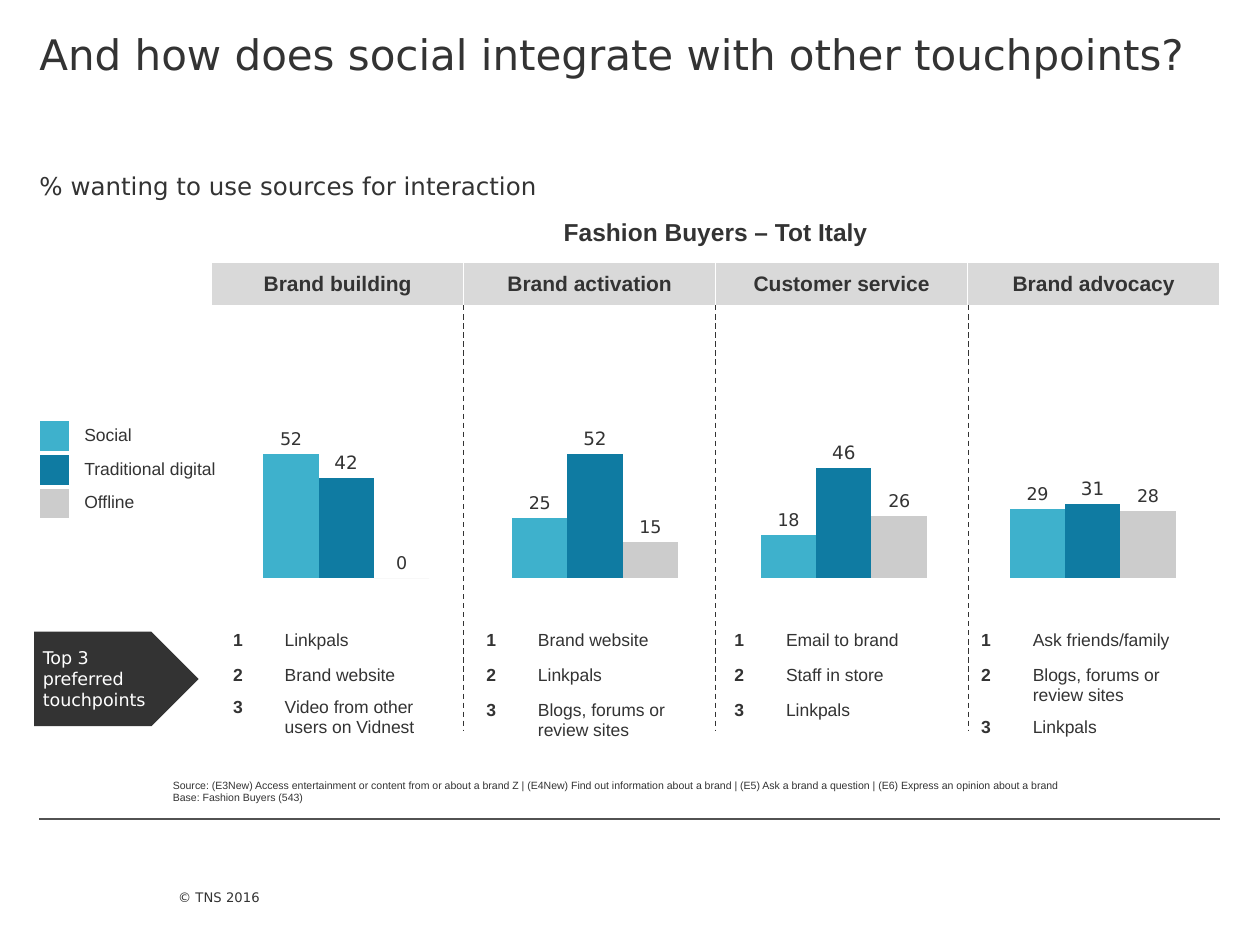
import pptx
import pptx.util
import pptx.chart.data
import pptx.dml.color
import pptx.enum.chart
import pptx.enum.dml
import pptx.enum.shapes
import pptx.enum.text
import pptx.oxml
import pptx.oxml.ns
import lxml.etree

Pt = pptx.util.Pt
RGB = pptx.dml.color.RGBColor.from_string
qn = pptx.oxml.ns.qn
ANCHOR = pptx.enum.text.MSO_ANCHOR
CENTER = pptx.enum.text.PP_ALIGN.CENTER
LEFT = pptx.enum.text.PP_ALIGN.LEFT

theme = {
    "ink": "333333", "rule": "525252", "white": "FFFFFF", "header": "D9D9D9",
    "social": "3EB1CC", "digital": "0F7BA2", "offline": "CCCCCC",
    "sans": "Arial", "display": "DejaVu Sans", "plain_table": "{2D5ABB26-0587-4C30-8999-92F81FD0307C}",
    "title": 24, "subtitle": 14, "heading": 12, "body": 10, "label": 10.5, "footer": 7.5, "source": 6,
}


def write(holder, text, size, face="sans", color="ink", bold=False, align=LEFT, **layout):
    for name, value in layout.items():
        setattr(holder, name, value)
    frame = getattr(holder, "text_frame", holder)
    frame.text = text
    paragraph = frame.paragraphs[0]
    paragraph.alignment = align
    if not text:
        lxml.etree.SubElement(paragraph._p, qn("a:endParaRPr")).set("sz", str(theme[size] * 100))
    for run in paragraph.runs:
        values = {"name": theme[face], "size": Pt(theme[size]), "bold": bold}
        for name, value in values.items():
            setattr(run.font, name, value)
        run.font.color.rgb = RGB(theme[color])


def add_grid(left, top, widths, heights, fills=None, border=0, sides="LRTB"):
    table = slide.shapes.add_table(len(heights), len(widths), Pt(left), Pt(top),
                                   Pt(sum(widths)), Pt(sum(heights))).table
    table.first_row = table.horz_banding = False
    table._tbl.tblPr.find(qn("a:tableStyleId")).text = theme["plain_table"]
    for column, width in zip(table.columns, widths):
        column.width = Pt(width)
    for row, height in zip(table.rows, heights):
        row.height = Pt(height)
    for index, cell in enumerate(table.iter_cells()):
        for side in sides if border else "":
            line = lxml.etree.SubElement(cell._tc.get_or_add_tcPr(), qn(f"a:ln{side}"), w=str(Pt(border)))
            solid = lxml.etree.SubElement(line, qn("a:solidFill"))
            lxml.etree.SubElement(solid, qn("a:srgbClr"), val=theme["white"])
        if fills and fills[index]:
            cell.fill.solid()
            cell.fill.fore_color.rgb = RGB(theme[fills[index]])
        else:
            cell.fill.background()
    return table


deck = pptx.Presentation()
deck.slide_width, deck.slide_height = Pt(720), Pt(540)
slide = deck.slides.add_slide(deck.slide_layouts[5])

title = slide.shapes.title
title.left, title.top, title.width, title.height = Pt(22.5), Pt(0), Pt(674.5), Pt(81.5)
subtitle = slide.shapes.add_textbox(Pt(22.5), Pt(81.5), Pt(674.5), Pt(43))
copyright_line = slide.shapes.add_textbox(Pt(101.75), Pt(498), Pt(200), Pt(42))
no_inset = {f"margin_{side}": 0 for side in ("left", "top", "right", "bottom")}
frame_layout = no_inset | {"word_wrap": True, "auto_size": pptx.enum.text.MSO_AUTO_SIZE.NONE,
                           "vertical_anchor": ANCHOR.TOP}
heading_layout = frame_layout | {"margin_top": Pt(16.5)}
footer_layout = frame_layout | {"margin_bottom": Pt(22.5), "vertical_anchor": ANCHOR.BOTTOM}
for box, text, size, layout in (
    (title, "And how does social integrate with other touchpoints?", "title", heading_layout),
    (subtitle, "% wanting to use sources for interaction", "subtitle", heading_layout),
    (copyright_line, "© TNS 2016", "footer", footer_layout),
):
    write(box.text_frame, text, size, "display", **layout)

chart_data = pptx.chart.data.CategoryChartData()
chart_data.categories = ["1", "2", "3", "4"]
sources = (
    ("Social", "social", (52, 25, 18, 29), "body"),
    ("Traditional digital", "digital", (42, 52, 46, 31), "label"),
    ("Offline", "offline", (0, 15, 26, 28), "body"),
)
for name, color, values, size in sources:
    chart_data.add_series(name, values)
chart = slide.shapes.add_chart(pptx.enum.chart.XL_CHART_TYPE.COLUMN_CLUSTERED, Pt(121), Pt(181.5),
                               Pt(574.5), Pt(179.5), chart_data).chart
chart.has_legend = chart.has_title = False
chart.font.name, chart.font.size = theme["display"], Pt(theme["body"])
chart.font.color.rgb = RGB(theme["ink"])
for name, value in {"minimum_scale": 0, "maximum_scale": 100, "major_unit": 25,
                    "has_major_gridlines": False, "visible": False}.items():
    setattr(chart.value_axis, name, value)
chart.category_axis.visible = False
columns = chart.plots[0]
columns.gap_width, columns.overlap, columns.vary_by_categories = 150, 0, False
for series, (name, color, values, size) in zip(columns.series, sources):
    series.format.fill.solid()
    series.format.fill.fore_color.rgb = RGB(theme[color])
    labels = series.data_labels
    labels.show_value = True
    labels.position = pptx.enum.chart.XL_LABEL_POSITION.OUTSIDE_END
    labels.font.name, labels.font.size = theme["display"], Pt(theme[size])
    labels.font.color.rgb = RGB(theme["ink"])
plot_area = chart._chartSpace.chart.plotArea
for old_layout in plot_area.findall(qn("c:layout")):
    plot_area.remove(old_layout)
plot_layout = lxml.etree.Element(qn("c:layout"))
plot_area.insert(0, plot_layout)
manual = lxml.etree.SubElement(plot_layout, qn("c:manualLayout"))
for tag, value in (("layoutTarget", "inner"), ("xMode", "edge"), ("yMode", "edge"),
                   ("x", "0.01"), ("y", "0.07"), ("w", "0.99"), ("h", "0.76")):
    lxml.etree.SubElement(manual, qn(f"c:{tag}"), val=value)

legend_fills = [fill for source in sources for fill in (source[1], None)]
legend = add_grid(21.75, 239.5, (19.25, 105), (18.5,) * 3, legend_fills, 3)
for row, source in enumerate(sources):
    write(legend.cell(row, 0), "", "body")
    write(legend.cell(row, 1), source[0], "body")

audience = add_grid(124, 119.5, (570,), (27.5,))
write(audience.cell(0, 0), "Fashion Buyers – Tot Italy", "subtitle", bold=True, align=CENTER,
      vertical_anchor=ANCHOR.MIDDLE)

goals = ("", "Brand building", "Brand activation", "Customer service", "Brand advocacy")
goal_header = add_grid(22.5, 150, (98.5,) + (144,) * 4, (24.5,), ["white"] + ["header"] * 4, 1, "LR")
for column, goal in enumerate(goals):
    write(goal_header.cell(0, column), goal, "heading", bold=True, align=CENTER,
          vertical_anchor=ANCHOR.MIDDLE)

rules = [(x, 174.5, x, 418, "ink", pptx.enum.dml.MSO_LINE.DASH) for x in (265, 409, 553.5)]
rules.append((22.5, 468, 697, 468, "rule", pptx.enum.dml.MSO_LINE.SOLID))
for x1, y1, x2, y2, color, dash in rules:
    rule = slide.shapes.add_connector(pptx.enum.shapes.MSO_CONNECTOR.STRAIGHT, Pt(x1), Pt(y1), Pt(x2), Pt(y2))
    rule.line.width, rule.line.dash_style = Pt(0.75), dash
    rule.line.color.rgb = RGB(theme[color])
    lxml.etree.SubElement(rule._element.spPr, qn("a:effectLst"))

rankings = (
    (126, 17.5, ("Linkpals", "Brand website", "Video from other users on Vidnest")),
    (270.75, 20, ("Brand website", "Linkpals", "Blogs, forums or review sites")),
    (412.5, 20, ("Email to brand", "Staff in store", "Linkpals")),
    (553.5, 20, ("Ask friends/family", "Blogs, forums or review sites", "Linkpals")),
)
for left, middle_height, touchpoints in rankings:
    ranking = add_grid(left, 357, (29.5, 110), (20, middle_height, 20))
    for row, touchpoint in enumerate(touchpoints):
        write(ranking.cell(row, 0), str(row + 1), "body", bold=True)
        write(ranking.cell(row, 1), touchpoint, "body")

top_three = slide.shapes.add_shape(pptx.enum.shapes.MSO_SHAPE.PENTAGON, Pt(19.5), Pt(361), Pt(94), Pt(54))
top_three.shadow.inherit = False
top_three.fill.solid()
top_three.fill.fore_color.rgb = RGB(theme["ink"])
top_three.line.fill.background()
write(top_three.text_frame, "Top 3 preferred touchpoints", "body", "display", "white",
      word_wrap=True, vertical_anchor=ANCHOR.TOP, margin_left=Pt(5), margin_top=Pt(8.5),
      margin_right=Pt(5), margin_bottom=Pt(5))

notes = (
    "Source: (E3New) Access entertainment or content from or about a brand Z | "
    "(E4New) Find out information about a brand | (E5) Ask a brand a question | "
    "(E6) Express an opinion about a brand",
    "Base: Fashion Buyers (543)",
)
source_table = add_grid(98.75, 445.5, (599,), (7, 7))
for row, note in enumerate(notes):
    write(source_table.cell(row, 0), note, "source", vertical_anchor=ANCHOR.MIDDLE, **no_inset)

deck.save("out.pptx")
